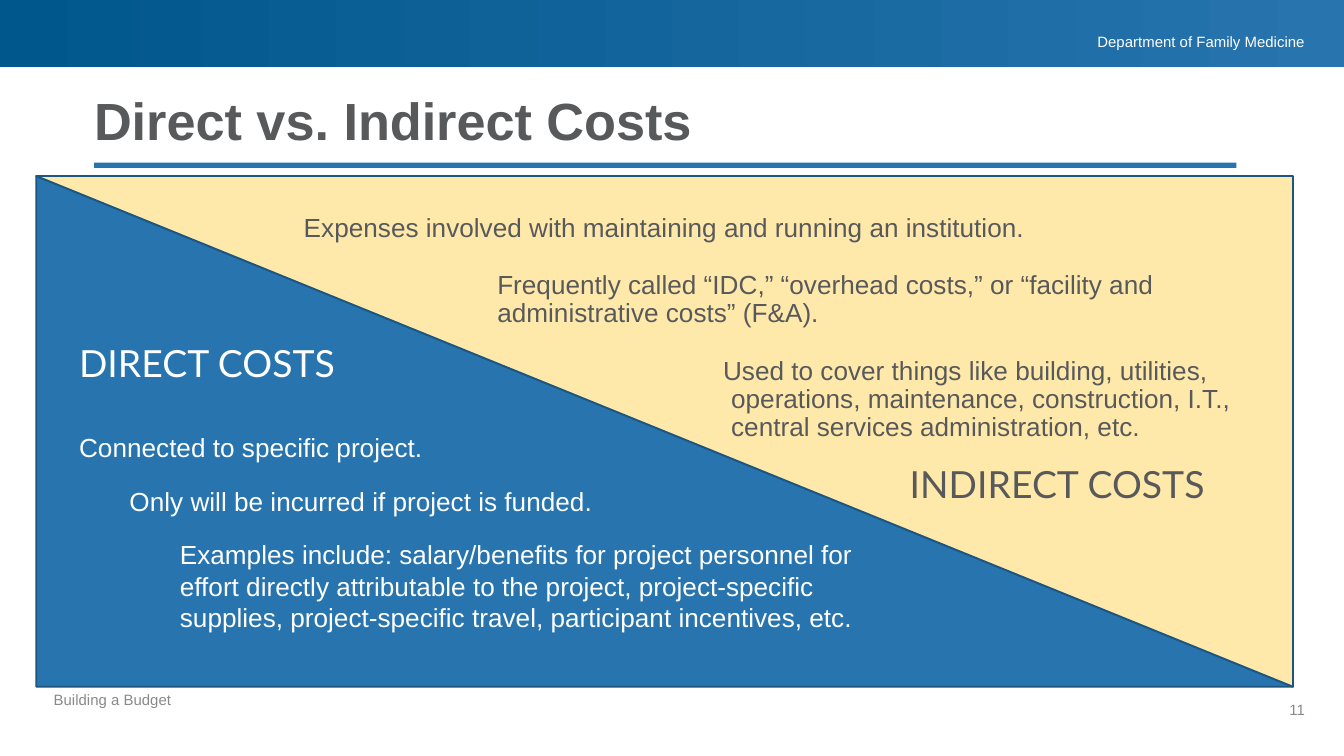
from pptx import Presentation
from pptx.dml.color import RGBColor
from pptx.enum.shapes import MSO_SHAPE
from pptx.enum.text import MSO_ANCHOR, PP_ALIGN
from pptx.util import Inches, Pt

RECTANGLE, TRIANGLE = MSO_SHAPE.RECTANGLE, MSO_SHAPE.RIGHT_TRIANGLE
TOP, BOTTOM = MSO_ANCHOR.TOP, MSO_ANCHOR.BOTTOM
RIGHT = PP_ALIGN.RIGHT

# Grid: 100 columns by 56.25 rows of square cells
WIDTH, HEIGHT = Inches(10), Inches(5.625)
CELL = WIDTH / 100

BLUE, DARK_BLUE, OUTLINE = "2774AE", "00578B", "1D5681"
CREAM, WHITE = "FFE9AA", "FFFFFF"
GRAY, LIGHT_GRAY = "58595B", "898989"
DIAGONAL_AREA = (2.7, 13.1, 93.5, 38)
DEFAULT_INSETS = (1, 0.5, 1, 0.5)
NO_INSETS = (0, 0, 0, 0)

BODY = {"size": 14, "color": GRAY}
HEADING = {"size": 20, "name": "Lato"}
SMALL = {"size": 8, "color": LIGHT_GRAY}

# Each point: text, left margin and first-line indent in cells, spacing
INDIRECT_POINTS = [
    ("Expenses involved with maintaining and running an institution.",
     0, 0, {"space_after": Pt(12)}),
    ("Frequently called “IDC,” “overhead costs,” or “facility and administrative costs” (F&A).",
     14.4, 0, {"space_before": Pt(3.8), "space_after": Pt(12), "line_spacing": 0.9}),
    ("Used to cover things like building, utilities, operations, maintenance, "
     "construction, I.T., central services administration, etc.",
     31.8, -0.6, {"space_before": Pt(3.8), "space_after": Pt(12), "line_spacing": 0.9}),
]
DIRECT_TEXTS = [
    "Connected to specific project.",
    "Only will be incurred if project is funded.",
    "Examples include: salary/benefits for project personnel for effort directly "
    "attributable to the project, project-specific supplies, project-specific travel, "
    "participant incentives, etc.",
]
DIRECT_POINTS = [(text, 3.75 * step, 0, {"space_after": Pt(12)})
                 for step, text in enumerate(DIRECT_TEXTS)]


def cells(count):
    return round(count * CELL)


def color(value):
    return RGBColor.from_string(value)


def set_values(target, values):
    for name, value in values.items():
        setattr(target, name, value)


def add_block(slide, kind, area, fill, line=None, rotation=0):
    shape = slide.shapes.add_shape(kind, *map(cells, area))
    shape.shadow.inherit = False
    shape.rotation = rotation
    if isinstance(fill, tuple):
        shape.fill.gradient()
        shape.fill.gradient_angle = 0
        for position, (stop, value) in enumerate(zip(shape.fill.gradient_stops, fill)):
            stop.position = position
            stop.color.rgb = color(value)
    else:
        shape.fill.solid()
        shape.fill.fore_color.rgb = color(fill)
    if line:
        shape.line.color.rgb = color(line)
        shape.line.width = Pt(1)
    else:
        shape.line.fill.background()


def add_text(slide, area, points, style, insets=DEFAULT_INSETS, anchor=TOP, align=None):
    if isinstance(points, str):
        points = [(points, 0, 0, {})]
    frame = slide.shapes.add_textbox(*map(cells, area)).text_frame
    left, top, right, bottom = map(cells, insets)
    set_values(frame, {"word_wrap": True, "vertical_anchor": anchor,
                       "margin_left": left, "margin_top": top,
                       "margin_right": right, "margin_bottom": bottom})
    for index, (text, margin, indent, spacing) in enumerate(points):
        paragraph = frame.add_paragraph() if index else frame.paragraphs[0]
        if margin:
            properties = paragraph._p.get_or_add_pPr()
            properties.set("marL", str(cells(margin)))
            properties.set("indent", str(cells(indent)))
        set_values(paragraph, {"alignment": align, **spacing})
        run = paragraph.add_run()
        run.text = text
        set_values(run.font, {"name": style.get("name", "Arial"),
                              "size": Pt(style["size"]),
                              "bold": style.get("bold", False)})
        run.font.color.rgb = color(style["color"])


def main():
    presentation = Presentation()
    set_values(presentation, {"slide_width": WIDTH, "slide_height": HEIGHT})
    slide = presentation.slides.add_slide(presentation.slide_layouts[6])

    # Banner, title and rule
    add_block(slide, RECTANGLE, (7, 12.1, 85, 0.4), BLUE)
    add_block(slide, RECTANGLE, (0, 0, 100, 5), (DARK_BLUE, BLUE))
    add_text(slide, (72, 2.3, 25.1, 1.4), "Department of Family Medicine",
             {"size": 8, "color": WHITE}, (1, 0.1, 0, 0.1), align=RIGHT)
    add_text(slide, (7, 7, 85, 4.3), [("Direct vs. Indirect Costs", 0, 0, {"line_spacing": 0.9})],
             {"size": 28, "color": GRAY, "bold": True}, NO_INSETS, BOTTOM)

    # Two halves of the diagonal panel
    add_block(slide, TRIANGLE, DIAGONAL_AREA, BLUE, OUTLINE)
    add_block(slide, TRIANGLE, DIAGONAL_AREA, CREAM, OUTLINE, rotation=180)

    # Indirect and direct costs
    add_text(slide, (22.6, 15.7, 71.1, 17.4), INDIRECT_POINTS, BODY, NO_INSETS)
    add_text(slide, (66.7, 33.8, 29.1, 4.4), "INDIRECT COSTS", {**HEADING, "color": GRAY})
    add_text(slide, (4.9, 31.6, 62.4, 16.2), DIRECT_POINTS, {**BODY, "color": WHITE})
    add_text(slide, (4.9, 24.8, 26.7, 4.4), "DIRECT COSTS", {**HEADING, "color": WHITE})

    # Footer, clear of the panel's bottom edge
    add_text(slide, (4, 51.4, 39, 4), "Building a Budget", SMALL, NO_INSETS)
    add_text(slide, (92.1, 52.1, 5, 4), "11", SMALL, NO_INSETS, align=RIGHT)

    presentation.save("out.pptx")


if __name__ == "__main__":
    main()
